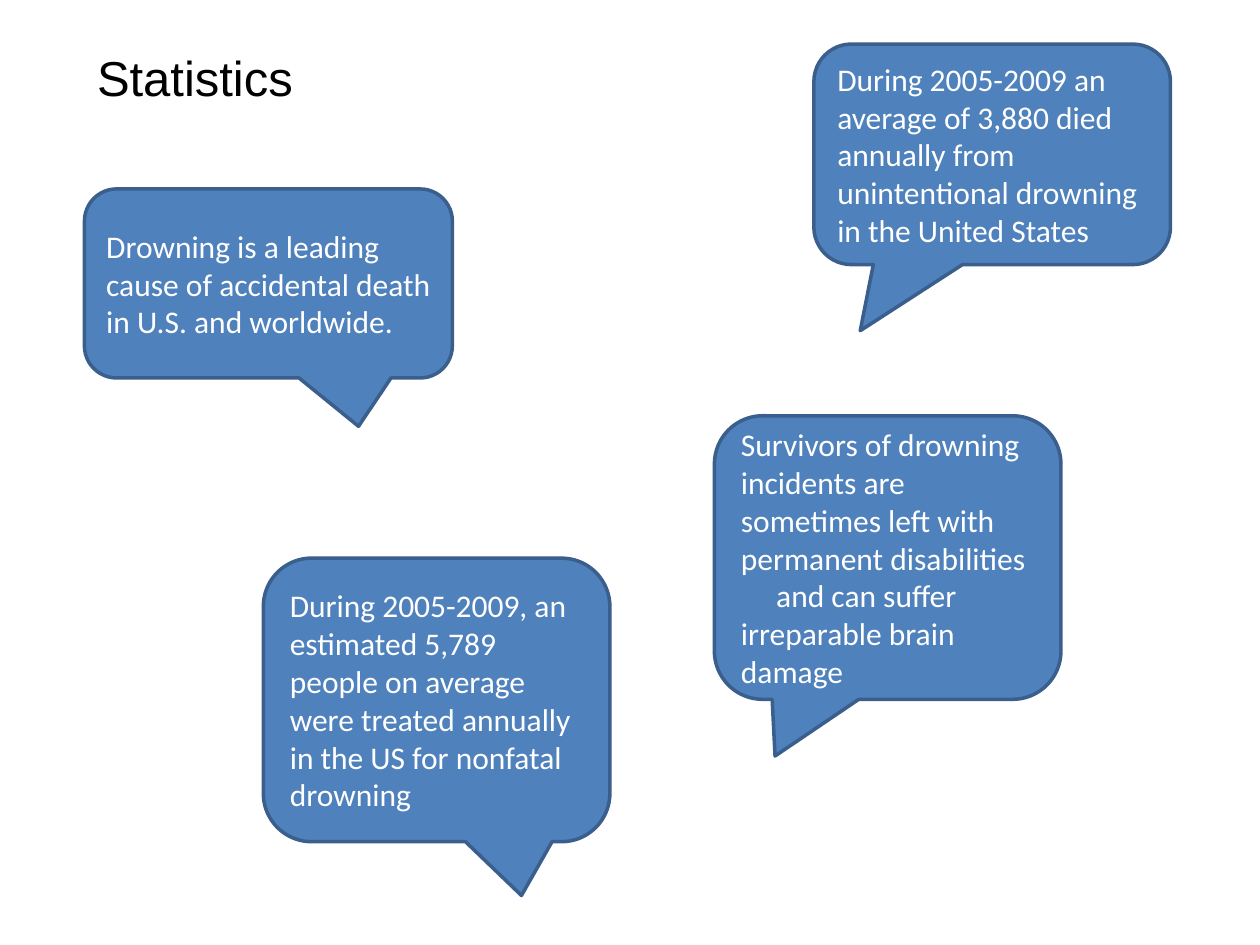
"""Build a slide of drowning statistics in speech callouts."""
import pptx
import pptx.dml.color
import pptx.enum.shapes
import pptx.enum.text
import pptx.util

Inches, Pt = pptx.util.Inches, pptx.util.Pt
COLOURS = {"title": "000000", "callout": "4F81BD", "outline": "3A5F8C", "words": "FFFFFF"}
HEADING = "Statistics"
CALLOUTS = [
    {"box": (0.67, 1.5, 2.92, 1.5), "tip": (0.245, 0.756),
     "lines": ["Drowning is a leading cause of accidental death in U.S. and worldwide."]},
    {"box": (6.46, 0.35, 2.83, 1.75), "tip": (-0.37, 0.8),
     "lines": ["During 2005-2009 an average of 3,880 died annually from "
               "unintentional drowning in the United States"]},
    {"box": (2.09, 4.43, 2.75, 2.25), "tip": (0.245, 0.69),
     "lines": ["During 2005-2009, an estimated 5,789 people on average were "
               "treated annually in the US for nonfatal drowning"]},
    {"box": (5.67, 3.3, 2.75, 2.25), "tip": (-0.325, 0.7),
     "lines": ["Survivors of drowning incidents are sometimes left with permanent disabilities",
               "and can suffer irreparable brain damage"]},
]
CORNER = 0.17
CONTINUATION_INDENT = 0.28


def rgb(name):
    return pptx.dml.color.RGBColor.from_string(COLOURS[name])


def style(paragraph, face, size, colour):
    paragraph.alignment = pptx.enum.text.PP_ALIGN.LEFT
    paragraph.font.name = face
    paragraph.font.size = Pt(size)
    paragraph.font.color.rgb = rgb(colour)


def add_heading(slide):
    heading = slide.shapes.title
    heading.left, heading.top, heading.width, heading.height = map(Inches, (0.67, 0.33, 1.92, 0.57))
    frame = heading.text_frame
    frame.text = HEADING
    frame.vertical_anchor = pptx.enum.text.MSO_ANCHOR.TOP
    frame.auto_size = pptx.enum.text.MSO_AUTO_SIZE.SHAPE_TO_FIT_TEXT
    style(frame.paragraphs[0], "Arial", 28, "title")


def add_callout(slide, box, tip, lines):
    kind = pptx.enum.shapes.MSO_SHAPE.ROUNDED_RECTANGULAR_CALLOUT
    callout = slide.shapes.add_shape(kind, *map(Inches, box))
    for index, value in enumerate((*tip, CORNER)):
        callout.adjustments[index] = value
    callout.shadow.inherit = False
    callout.fill.solid()
    callout.fill.fore_color.rgb = rgb("callout")
    callout.line.color.rgb = rgb("outline")
    callout.line.width = Pt(2)
    frame = callout.text_frame
    frame.word_wrap = True
    frame.vertical_anchor = pptx.enum.text.MSO_ANCHOR.MIDDLE
    frame.text = "\n".join(lines)
    for index, paragraph in enumerate(frame.paragraphs):
        if index:
            paragraph._p.get_or_add_pPr().set("indent", str(Inches(CONTINUATION_INDENT)))
        style(paragraph, "Calibri", 18, "words")


def main():
    deck = pptx.Presentation()
    deck.slide_width, deck.slide_height = Inches(10), Inches(7.5)
    slide = deck.slides.add_slide(deck.slide_layouts.get_by_name("Title Only"))
    add_heading(slide)
    for callout in CALLOUTS:
        add_callout(slide, **callout)
    deck.save("out.pptx")


if __name__ == "__main__":
    main()
